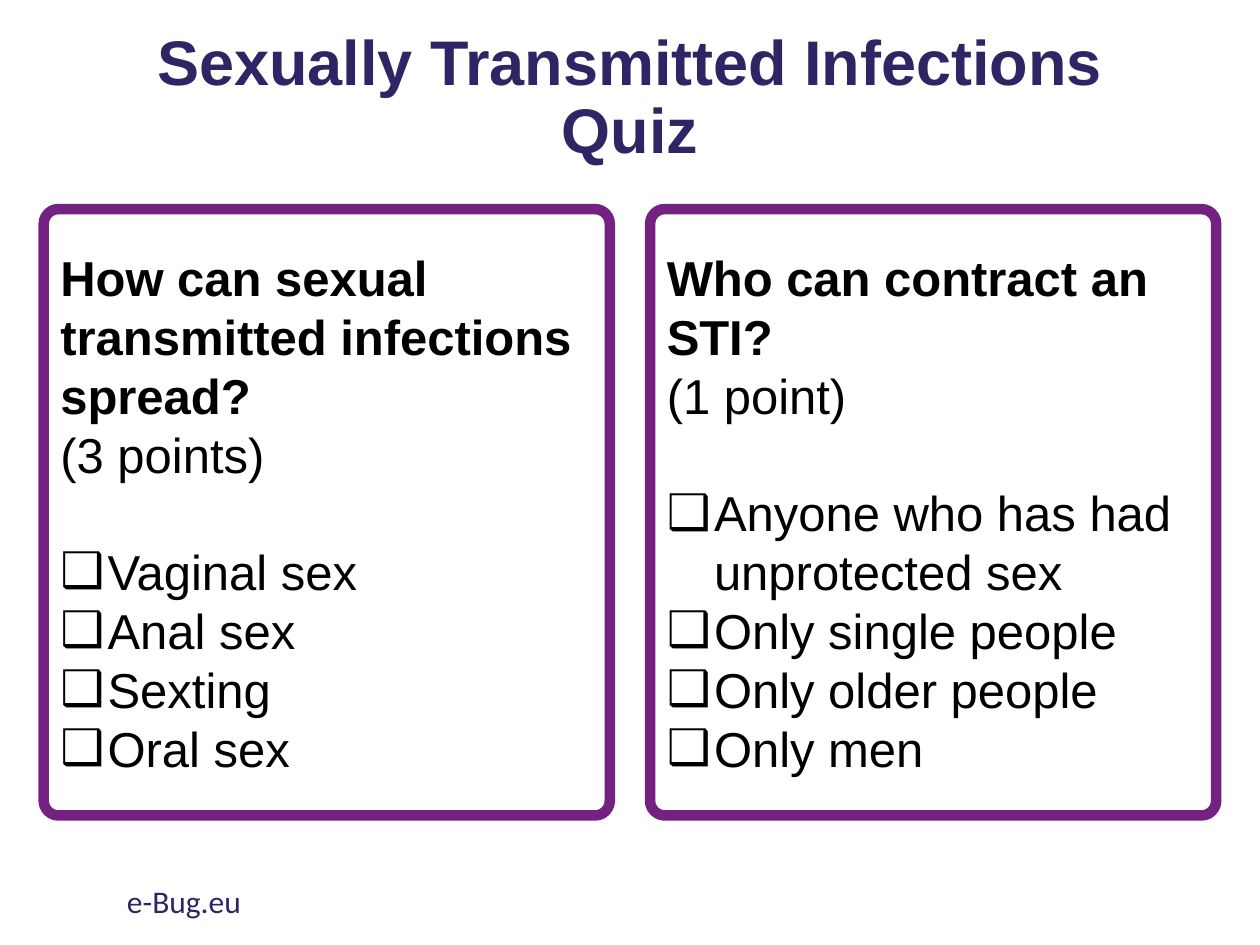
"""Build the sexually transmitted infections quiz slide."""
from dataclasses import dataclass

from lxml import etree
from pptx import Presentation
from pptx.dml.color import RGBColor
from pptx.enum import shapes, text
from pptx.oxml import ns
from pptx.util import Pt


@dataclass(frozen=True)
class Theme:
    navy: str = "302564"
    purple: str = "732281"
    black: str = "000000"
    font: str = "Arial"
    footer_font: str = "Calibri"
    title_size: int = 36
    body_size: int = 28
    footer_size: int = 18
    border: int = 6


THEME = Theme()
CARD_TOP, CARD_WIDTH, CARD_HEIGHT = 119.5, 323.5, 346.5
CARD_LEFT, CARD_STEP = 25, 346.5
BULLET_INDENT = 27
ANSWER_GAP = 33.6

QUESTIONS = [
    ("How can sexual transmitted infections spread?", "(3 points)",
     ["Vaginal sex", "Anal sex", "Sexting", "Oral sex"]),
    ("Who can contract an STI?", "(1 point)",
     ["Anyone who has had unprotected sex", "Only single people",
      "Only older people", "Only men"]),
]


def add_bullet(p):
    pPr = p._p.get_or_add_pPr()
    pPr.set("marL", str(Pt(BULLET_INDENT)))
    pPr.set("indent", str(-Pt(BULLET_INDENT)))
    etree.SubElement(pPr, ns.qn("a:buFont")).set("typeface", THEME.font)
    etree.SubElement(pPr, ns.qn("a:buChar")).set("char", "❑")


def write(tf, words, size=THEME.body_size, color=THEME.black, font=THEME.font,
          bold=False, align=text.PP_ALIGN.LEFT, bullet=False, before=0,
          spacing=None):
    p = tf.paragraphs[0]
    if p.runs:
        p = tf.add_paragraph()
    if bullet:
        add_bullet(p)
    p.alignment = align
    if before:
        p.space_before = Pt(before)
    if spacing:
        p.line_spacing = spacing
    r = p.add_run()
    r.text = words
    r.font.name, r.font.size, r.font.bold = font, Pt(size), bold
    r.font.color.rgb = RGBColor.from_string(color)


def add_title(s, words):
    sp = s.shapes.title
    sp.left, sp.top, sp.width, sp.height = Pt(49.5), Pt(24), Pt(621), Pt(65.5)
    tf = sp.text_frame
    tf.word_wrap = True
    tf.auto_size = text.MSO_AUTO_SIZE.NONE
    tf.vertical_anchor = text.MSO_ANCHOR.MIDDLE
    write(tf, words, size=THEME.title_size, color=THEME.navy, bold=True,
          align=text.PP_ALIGN.CENTER, spacing=0.9)


def add_card(s, left, question, points, answers):
    sp = s.shapes.add_shape(shapes.MSO_SHAPE.ROUNDED_RECTANGLE, Pt(left),
                            Pt(CARD_TOP), Pt(CARD_WIDTH), Pt(CARD_HEIGHT))
    sp.adjustments[0] = 0.026
    sp.shadow.inherit = False
    sp.fill.background()
    sp.line.color.rgb = RGBColor.from_string(THEME.purple)
    sp.line.width = Pt(THEME.border)
    tf = sp.text_frame
    tf.word_wrap = True
    tf.vertical_anchor = text.MSO_ANCHOR.MIDDLE
    write(tf, question, bold=True)
    write(tf, points)
    for i, answer in enumerate(answers):
        write(tf, answer, bullet=True, before=0 if i else ANSWER_GAP)


def add_footer(s, words):
    sp = s.shapes.add_textbox(Pt(65.5), Pt(500.5), Pt(243.5), Pt(29))
    sp.text_frame.word_wrap = True
    write(sp.text_frame, words, size=THEME.footer_size, color=THEME.navy,
          font=THEME.footer_font)


def main():
    prs = Presentation()
    prs.slide_width, prs.slide_height = Pt(720), Pt(540)
    s = prs.slides.add_slide(prs.slide_layouts[5])
    add_title(s, "Sexually Transmitted Infections Quiz")
    for i, (question, points, answers) in enumerate(QUESTIONS):
        add_card(s, CARD_LEFT + i * CARD_STEP, question, points, answers)
    add_footer(s, "e-Bug.eu")
    prs.save("out.pptx")


if __name__ == "__main__":
    main()
